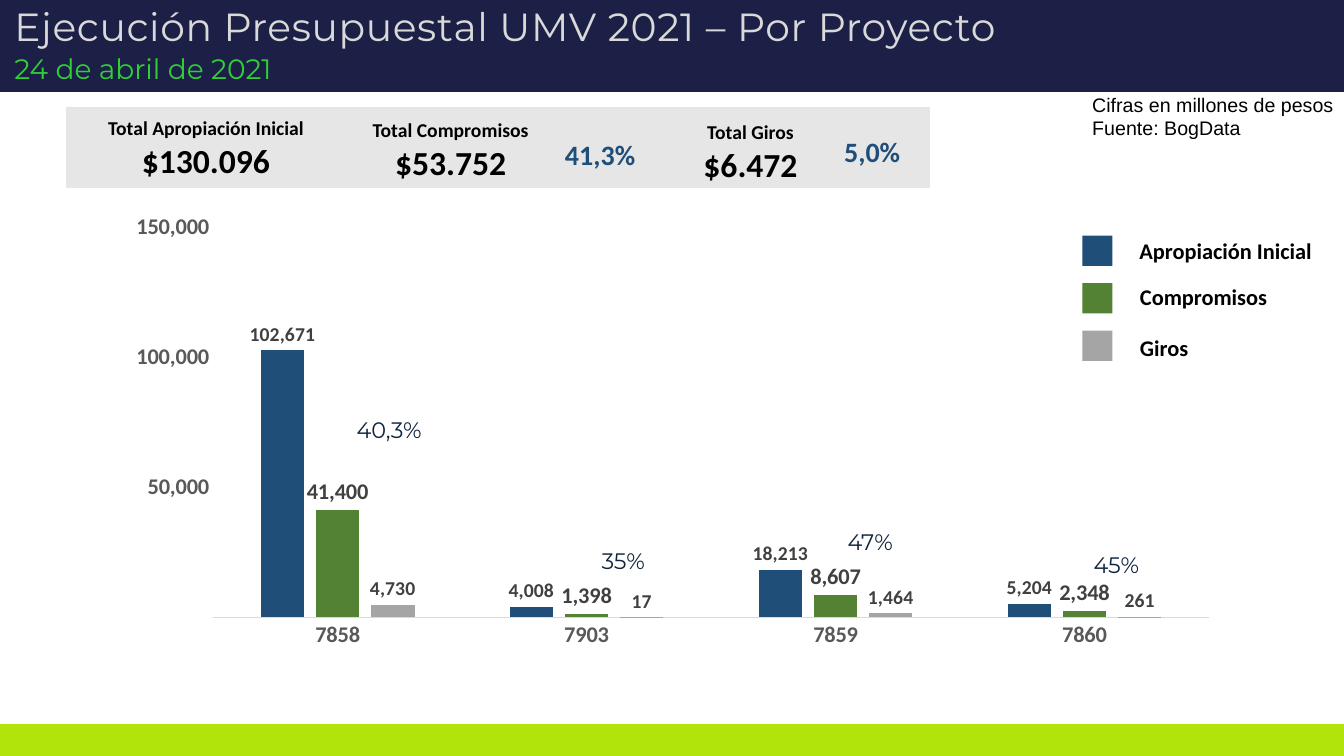
from dataclasses import dataclass

from lxml import etree
from pptx import Presentation
from pptx.chart.data import CategoryChartData
from pptx.dml.color import RGBColor
from pptx.enum.chart import XL_CHART_TYPE, XL_LABEL_POSITION, XL_TICK_MARK
from pptx.enum.shapes import MSO_SHAPE
from pptx.enum.text import MSO_ANCHOR, MSO_AUTO_SIZE, PP_ALIGN
from pptx.oxml.ns import qn
from pptx.util import Pt

RECTANGLE = MSO_SHAPE.RECTANGLE
CLUSTERED = XL_CHART_TYPE.COLUMN_CLUSTERED
OUTSIDE_END = XL_LABEL_POSITION.OUTSIDE_END
NO_TICK = XL_TICK_MARK.NONE
TOP, MIDDLE = MSO_ANCHOR.TOP, MSO_ANCHOR.MIDDLE
GROW = MSO_AUTO_SIZE.SHAPE_TO_FIT_TEXT
LEFT, CENTER = PP_ALIGN.LEFT, PP_ALIGN.CENTER

WHITE = RGBColor(0xFF, 0xFF, 0xFF)
BLACK = RGBColor(0, 0, 0)
NAVY = RGBColor(0x1C, 0x20, 0x46)
LIME = RGBColor(0xB0, 0xE4, 0x0A)
GREEN_DATE = RGBColor(0x31, 0xCE, 0x39)
TITLE_GRAY = RGBColor(0xD9, 0xD9, 0xD9)
PANEL_GRAY = RGBColor(0xE7, 0xE6, 0xE6)
DARK_BLUE = RGBColor(0x0F, 0x24, 0x3E)
BLUE = RGBColor(0x1F, 0x4E, 0x79)
GREEN = RGBColor(0x54, 0x82, 0x35)
GRAY = RGBColor(0xA5, 0xA5, 0xA5)
AXIS_TEXT = RGBColor(0x59, 0x59, 0x59)
LABEL_TEXT = RGBColor(0x40, 0x40, 0x40)

SLIDE_WIDTH, SLIDE_HEIGHT = 960, 540
SWATCH_LEFT, SWATCH_TOP, SWATCH_SIZE, SWATCH_STEP = 773.1, 168.4, 21.6, 33.9
MILLION = 1_000_000
MILLIONS_FORMAT = "#,###,,"


@dataclass(frozen=True)
class Box:
    left: float
    top: float
    width: float
    height: float


@dataclass(frozen=True)
class Line:
    text: str
    size: float
    color: RGBColor = BLACK
    font: str = "Calibri"
    bold: bool = True


@dataclass(frozen=True)
class Caption:
    box: Box
    lines: tuple[Line, ...]
    align: PP_ALIGN = LEFT


@dataclass(frozen=True)
class Measure:
    name: str
    color: RGBColor
    millions: tuple[int, ...]
    label_size: float
    name_left: float
    name_top: float


CHART_BOX = Box(47.5, 140.4, 816.5, 326.2)
PLOT_BOX = Box(104.8, 22, 711.7, 278.6)
PROJECTS = ("7858", "7903", "7859", "7860")
MEASURES = (
    Measure("Apropiación Inicial", BLUE, (102671, 4008, 18213, 5204), 14, 806.8, 165.6),
    Measure("Compromisos", GREEN, (41400, 1398, 8607, 2348), 16, 807.2, 198.7),
    Measure("Giros", GRAY, (4730, 17, 1464, 261), 14, 807.2, 234.9),
)


def total(box: Box, name: str, amount: str) -> Caption:
    return Caption(box, (Line(name, 14), Line(amount, 24)), CENTER)


def share(box: Box, percent: str) -> Caption:
    return Caption(box, (Line(percent, 20, BLUE),))


def project_share(box: Box, percent: str) -> Caption:
    return Caption(box, (Line(percent, 16, DARK_BLUE, "Montserrat", False),))


PROJECT_SHARES = (
    project_share(Box(247.7, 293.8, 92.2, 30.2), "40,3%"),
    project_share(Box(422.6, 387.4, 92.2, 30.2), "35%"),
    project_share(Box(598.3, 373.7, 52.6, 29.5), "47%"),
    project_share(Box(774, 390.2, 54, 21.6), "45%"),
)
TOTALS = (
    share(Box(396.5, 95, 84.2, 31.7), "41,3%"),
    total(Box(243.1, 80.8, 157.7, 53.3), "Total Compromisos", "$53.752"),
    total(Box(474.2, 82.3, 123.8, 53.3), "Total Giros", "$6.472"),
    share(Box(595.9, 92.9, 69.1, 31.7), "5,0%"),
    total(Box(47.5, 79.4, 199.4, 53.3), "Total Apropiación Inicial", "$130.096"),
)
TITLE = Caption(Box(9.4, 4.3, 830.9, 56.9), (
    Line("Ejecución Presupuestal UMV 2021 – Por Proyecto", 28, TITLE_GRAY, "Montserrat", False),
    Line("24 de abril de 2021", 20, GREEN_DATE, "Montserrat", False),
))
SOURCE_NOTE = Caption(Box(773.1, 62.6, 186.9, 41), (
    Line("Cifras en millones de pesos", 14, BLACK, "Arial", False),
    Line("Fuente: BogData", 14, BLACK, "Arial", False),
))


def place(box: Box) -> tuple[Pt, Pt, Pt, Pt]:
    return Pt(box.left), Pt(box.top), Pt(box.width), Pt(box.height)


def style_font(font, size: float, color: RGBColor, name: str = "Calibri", bold: bool = True) -> None:
    font.size, font.name, font.bold = Pt(size), name, bold
    font.color.rgb = color


def write_lines(frame, caption: Caption) -> None:
    frame.word_wrap = True
    frame.vertical_anchor = TOP
    frame.text = "\n".join(line.text for line in caption.lines)
    for paragraph, line in zip(frame.paragraphs, caption.lines):
        paragraph.alignment = caption.align
        style_font(paragraph.runs[0].font, line.size, line.color, line.font, line.bold)


def draw_block(shapes, box: Box, fill: RGBColor, outlined: bool = False):
    block = shapes.add_shape(RECTANGLE, *place(box))
    block.shadow.inherit = False
    block.fill.solid()
    block.fill.fore_color.rgb = fill
    if outlined:
        block.line.color.rgb = fill
        block.line.width = Pt(1)
    else:
        block.line.fill.background()
    return block


def draw_caption(shapes, caption: Caption):
    frame = shapes.add_textbox(*place(caption.box)).text_frame
    write_lines(frame, caption)
    frame.auto_size = GROW
    return frame


def draw_title(shapes) -> None:
    frame = draw_caption(shapes, TITLE)
    frame.vertical_anchor = MIDDLE
    frame.margin_left = frame.margin_right = frame.margin_bottom = 0
    frame.margin_top = Pt(0.7)
    heading, date = frame.paragraphs
    heading.line_spacing = 0.9
    heading.runs[0].font._element.set("spc", "50")
    date.space_before = Pt(1)
    for paragraph in (heading, date):
        paragraph._p.get_or_add_pPr().set("marL", str(Pt(0.9)))


def draw_legend(shapes) -> None:
    for row, measure in enumerate(MEASURES):
        top = SWATCH_TOP + row * SWATCH_STEP
        draw_block(shapes, Box(SWATCH_LEFT, top, SWATCH_SIZE, SWATCH_SIZE), measure.color)
        name_box = Box(measure.name_left, measure.name_top, 145.4, 26.6)
        draw_caption(shapes, Caption(name_box, (Line(measure.name, 16),)))


def fix_plot_area(chart, frame: Box, plot: Box) -> None:
    plot_area = chart._chartSpace.chart.plotArea
    for old_layout in plot_area.findall(qn("c:layout")):
        plot_area.remove(old_layout)
    layout = etree.Element(qn("c:layout"))
    manual = etree.SubElement(layout, qn("c:manualLayout"))
    settings = (("layoutTarget", "inner"), ("xMode", "edge"), ("yMode", "edge"),
                ("x", plot.left / frame.width), ("y", plot.top / frame.height),
                ("w", plot.width / frame.width), ("h", plot.height / frame.height))
    for tag, value in settings:
        etree.SubElement(manual, qn(f"c:{tag}")).set("val", str(value))
    plot_area.insert(0, layout)


def draw_chart(shapes) -> None:
    data = CategoryChartData(number_format=MILLIONS_FORMAT)
    data.categories = PROJECTS
    for measure in MEASURES:
        data.add_series(measure.name, [amount * MILLION for amount in measure.millions])
    chart = shapes.add_chart(CLUSTERED, *place(CHART_BOX), data).chart
    chart.has_legend = chart.has_title = False
    style_font(chart.font, 10, BLACK, bold=False)
    plot = chart.plots[0]
    plot.gap_width, plot.overlap, plot.vary_by_categories = 219, -27, False
    for series, measure in zip(plot.series, MEASURES):
        series.format.fill.solid()
        series.format.fill.fore_color.rgb = measure.color
        labels = series.data_labels
        labels.show_value = True
        labels.position = OUTSIDE_END
        style_font(labels.font, measure.label_size, LABEL_TEXT)
    projects, amounts = chart.category_axis, chart.value_axis
    for axis in (projects, amounts):
        axis.has_major_gridlines = False
        axis.major_tick_mark = axis.minor_tick_mark = NO_TICK
        style_font(axis.tick_labels.font, 16, AXIS_TEXT)
    projects.format.line.color.rgb = TITLE_GRAY
    projects.format.line.width = Pt(0.75)
    amounts.format.line.fill.background()
    amounts.minimum_scale = 0
    amounts.maximum_scale, amounts.major_unit = 150000 * MILLION, 50000 * MILLION
    amounts.tick_labels.number_format = MILLIONS_FORMAT
    amounts.tick_labels.number_format_is_linked = False
    fix_plot_area(chart, CHART_BOX, PLOT_BOX)


def main() -> None:
    deck = Presentation()
    deck.slide_width, deck.slide_height = Pt(SLIDE_WIDTH), Pt(SLIDE_HEIGHT)
    shapes = deck.slides.add_slide(deck.slide_layouts[6]).shapes
    draw_block(shapes, Box(0, 517.7, SLIDE_WIDTH, 22.3), LIME, outlined=True)
    for caption in PROJECT_SHARES:
        write_lines(draw_block(shapes, caption.box, WHITE).text_frame, caption)
    draw_block(shapes, Box(0, 0, SLIDE_WIDTH, 65.7), NAVY)
    draw_title(shapes)
    draw_legend(shapes)
    draw_block(shapes, Box(47.5, 77, 616.3, 57.2), PANEL_GRAY, outlined=True)
    for caption in TOTALS:
        draw_caption(shapes, caption)
    draw_caption(shapes, SOURCE_NOTE).margin_right = 0
    draw_chart(shapes)
    deck.save("out.pptx")


if __name__ == "__main__":
    main()
